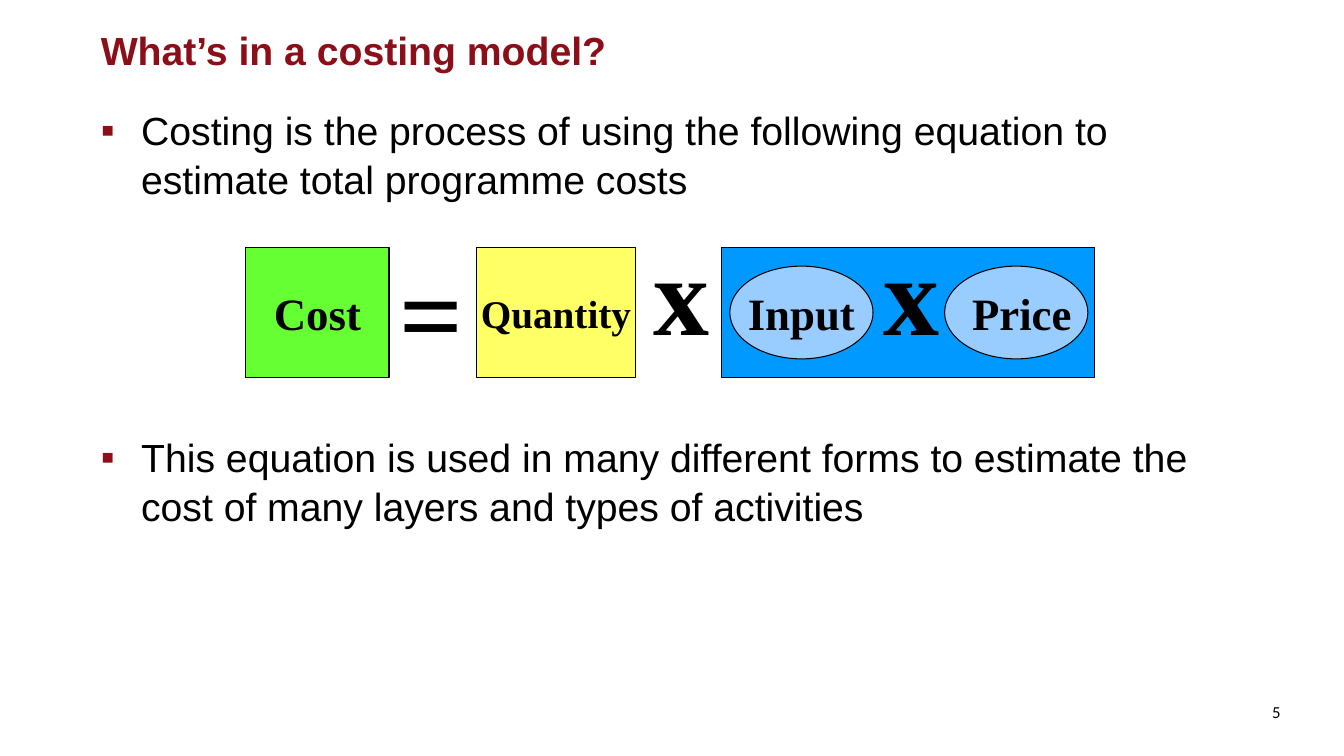
import pptx
import pptx.dml.color
import pptx.enum.shapes
import pptx.enum.text
import pptx.oxml
import pptx.oxml.ns
import pptx.util

WIDTH, HEIGHT = pptx.util.Inches(13.33), pptx.util.Inches(7.5)
SHAPE = pptx.enum.shapes.MSO_SHAPE
ALIGN = pptx.enum.text.PP_ALIGN
ANCHOR = pptx.enum.text.MSO_ANCHOR
BLACK, DARK_RED, LIGHT_BLUE = "000000", "8B0E18", "99CCFF"
SERIF = "Times New Roman"

# Shares of the slide's size, in percent
LEFT, CONTENT_W = 6.75, 86.35
BLOCK_TOP, BLOCK_H = 32.8, 17.2
OVAL_TOP, OVAL_H = 35.2, 12.27
TERM_W = 10.65
SIGN_W, SIGN_H = 5.33, 21.07
EQUALS_TOP, TIMES_TOP = 30.4, 27.87


def rgb(hex_colour):
    return pptx.dml.color.RGBColor.from_string(hex_colour)


def area(left, top, width, height):
    """Turn percentages of the slide into lengths."""
    return (int(WIDTH * left / 100), int(HEIGHT * top / 100),
            int(WIDTH * width / 100), int(HEIGHT * height / 100))


def place(sp, *shares):
    sp.left, sp.top, sp.width, sp.height = area(*shares)


def write(p, text, size=28, font="Arial", colour=BLACK, bold=False,
          align=ALIGN.LEFT, before=0, spacing=1.0):
    p.alignment = align
    p.space_before = pptx.util.Pt(before)
    p.line_spacing = spacing
    r = p.add_run()
    r.text = text
    r.font.size = pptx.util.Pt(size)
    r.font.name = font
    r.font.bold = bold
    r.font.color.rgb = rgb(colour)


def add_bullet(p, char, colour, indent):
    pPr = p._p.get_or_add_pPr()
    pPr.set("marL", str(indent))
    pPr.set("indent", str(-indent))
    ns = pptx.oxml.ns.nsdecls("a")
    for xml in (f'<a:buClr {ns}><a:srgbClr val="{colour}"/></a:buClr>',
                f'<a:buFont {ns} typeface="Arial"/>',
                f'<a:buChar {ns} char="{char}"/>'):
        pPr.append(pptx.oxml.parse_xml(xml))


def add_title(s, text):
    sp = s.shapes.title
    place(sp, LEFT, 3.6, CONTENT_W, 6)
    tf = sp.text_frame
    tf.auto_size = pptx.enum.text.MSO_AUTO_SIZE.NONE
    tf.vertical_anchor = ANCHOR.MIDDLE
    write(tf.paragraphs[0], text, colour=DARK_RED, bold=True)


def add_body(s, items, gap):
    """Fill the body with bullets that leave a gap for the equation."""
    sp = s.placeholders[1]
    place(sp, LEFT, 12.8, CONTENT_W, 76.8)
    tf = sp.text_frame
    tf.auto_size = pptx.enum.text.MSO_AUTO_SIZE.NONE
    tf.vertical_anchor = ANCHOR.TOP
    tf.margin_top = pptx.util.Inches(0.07)
    for i, item in enumerate(items):
        p = tf.add_paragraph() if i else tf.paragraphs[0]
        add_bullet(p, "▪", DARK_RED, pptx.util.Inches(0.4))
        write(p, item, before=gap if i else 0, spacing=1.05)


def add_term(s, kind, shares, fill, text="", size=32, shift=0):
    sp = s.shapes.add_shape(kind, *area(*shares))
    sp.shadow.inherit = False
    sp.fill.solid()
    sp.fill.fore_color.rgb = rgb(fill)
    sp.line.color.rgb = rgb(BLACK)
    sp.line.width = pptx.util.Pt(0.75)
    if text:
        tf = sp.text_frame
        tf.word_wrap = False
        tf.vertical_anchor = ANCHOR.MIDDLE
        tf.margin_left = pptx.util.Inches(0.1 + shift)
        write(tf.paragraphs[0], text, size=size, font=SERIF, bold=True,
              align=ALIGN.CENTER)


def add_text(s, shares, text, anchor=ANCHOR.TOP, **fmt):
    tf = s.shapes.add_textbox(*area(*shares)).text_frame
    tf.word_wrap = True
    tf.vertical_anchor = anchor
    write(tf.paragraphs[0], text, **fmt)


def add_equation(s):
    for left, width, fill, text, size in (
            (18.3, TERM_W, "66FF33", "Cost", 32),
            (35.48, 11.78, "FFFF66", "Quantity", 28),
            (53.71, 27.76, "0099FF", "", 32)):
        add_term(s, SHAPE.RECTANGLE, (left, BLOCK_TOP, width, BLOCK_H),
                 fill, text, size)
    for left, text, shift in ((54.31, "Input", 0), (70.29, "Price", 0.11)):
        add_term(s, SHAPE.OVAL, (left, OVAL_TOP, TERM_W, OVAL_H),
                 LIGHT_BLUE, text, shift=shift)
    for left, top, sign in ((28.96, EQUALS_TOP, "="),
                            (47.86, TIMES_TOP, "x"),
                            (64.97, TIMES_TOP, "x")):
        add_text(s, (left, top, SIGN_W, SIGN_H), sign, anchor=ANCHOR.MIDDLE,
                 size=80, font=SERIF, bold=True)


def main():
    prs = pptx.Presentation()
    prs.slide_width, prs.slide_height = WIDTH, HEIGHT
    s = prs.slides.add_slide(prs.slide_layouts[1])
    add_title(s, "What’s in a costing model?")
    add_body(s, (
        "Costing is the process of using the following equation to "
        "estimate total programme costs",
        "This equation is used in many different forms to estimate the "
        "cost of many layers and types of activities"), gap=163)
    add_equation(s)
    add_text(s, (90.32, 92.13, 5.7, 5.2), "5", size=12, font="Calibri",
             align=ALIGN.RIGHT)
    prs.save("out.pptx")


if __name__ == "__main__":
    main()
